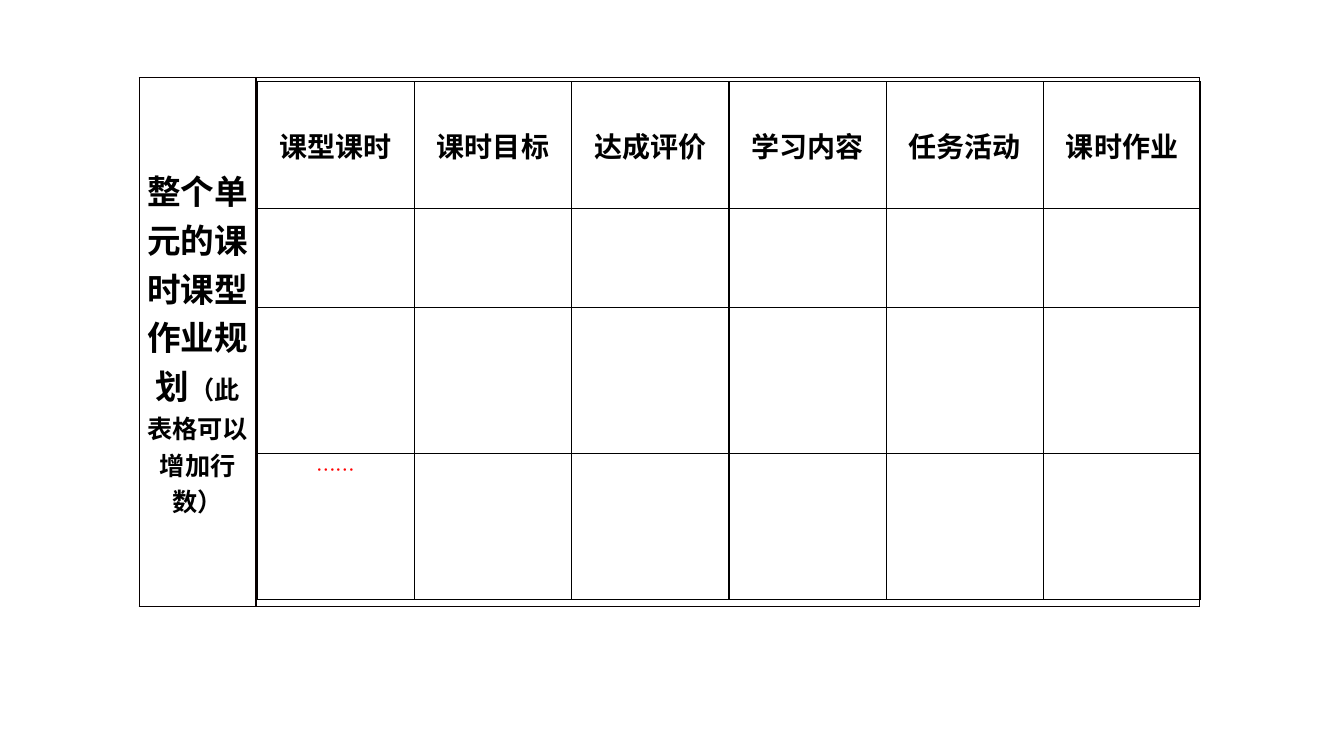
from dataclasses import dataclass

from lxml import etree
from pptx import Presentation
from pptx import util as u
from pptx.dml.color import RGBColor
from pptx.enum import text
from pptx.oxml import ns

EMU_PER_PX = 9144  # 100 px to the inch


def px(length):
    return u.Emu(length * EMU_PER_PX)


@dataclass(frozen=True)
class Theme:
    font: str = "Noto Sans CJK SC"
    ink: str = "000000"
    accent: str = "FF0000"
    outer_border: str = "080000"
    inner_border: str = "000000"
    label_size: int = 24
    header_size: int = 20
    remark_size: int = 18
    ellipsis_size: int = 14
    border_width: int = 1


class SlideBuilder:
    def __init__(self, presentation, theme):
        self.theme = theme
        self.slide = presentation.slides.add_slide(presentation.slide_layouts[6])

    def table(self, left, top, column_widths, row_heights, border):
        """Add an unfilled table whose cells all have the same border."""
        frame = self.slide.shapes.add_table(
            len(row_heights), len(column_widths), px(left), px(top),
            px(sum(column_widths)), px(sum(row_heights)))
        table = frame.table
        table.first_row = table.horz_banding = False
        for column, width in zip(table.columns, column_widths):
            column.width = px(width)
        for row, height in zip(table.rows, row_heights):
            row.height = px(height)
        for cell in table.iter_cells():
            self.borders(cell, border)
            cell.fill.background()
            cell.margin_left = cell.margin_right = px(7)
            cell.margin_top, cell.margin_bottom = px(1), px(0)
        return table

    def borders(self, cell, color):
        properties = cell._tc.get_or_add_tcPr()
        for side in ("lnL", "lnR", "lnT", "lnB"):
            line = etree.SubElement(properties, ns.qn(f"a:{side}"),
                                    w=str(u.Pt(self.theme.border_width)))
            fill = etree.SubElement(line, ns.qn("a:solidFill"))
            etree.SubElement(fill, ns.qn("a:srgbClr"), val=color)

    def cell_text(self, cell, wording, size, color=None, bold=True, middle=True):
        """Add a centred run to the cell's paragraph."""
        if middle:
            cell.vertical_anchor = text.MSO_ANCHOR.MIDDLE
        paragraph = cell.text_frame.paragraphs[0]
        paragraph.alignment = text.PP_ALIGN.CENTER
        run = paragraph.add_run()
        run.text = wording
        run.font.size = u.Pt(size)
        run.font.bold = bold
        run.font.color.rgb = RGBColor.from_string(color or self.theme.ink)
        run.font.name = self.theme.font
        east_asian = etree.SubElement(run._r.get_or_add_rPr(), ns.qn("a:ea"))
        east_asian.set("typeface", self.theme.font)


def main():
    presentation = Presentation()
    presentation.slide_width, presentation.slide_height = px(1333), px(750)
    theme = Theme()
    builder = SlideBuilder(presentation, theme)

    outline = builder.table(138, 77, [116, 936], [525], theme.outer_border)
    label = outline.cell(0, 0)
    label.margin_top = px(0)
    builder.cell_text(label, "整个单元的课时课型作业规划", theme.label_size)
    builder.cell_text(label, "（此表格可以增加行数）", theme.remark_size)

    headers = ["课型课时", "课时目标", "达成评价", "学习内容", "任务活动", "课时作业"]
    plan = builder.table(255, 81, [156] * len(headers), [126, 98, 145, 145],
                         theme.inner_border)
    for column, header in enumerate(headers):
        builder.cell_text(plan.cell(0, column), header, theme.header_size)
    builder.cell_text(plan.cell(3, 0), "……", theme.ellipsis_size, theme.accent,
                      bold=False, middle=False)

    presentation.save("out.pptx")


if __name__ == "__main__":
    main()
